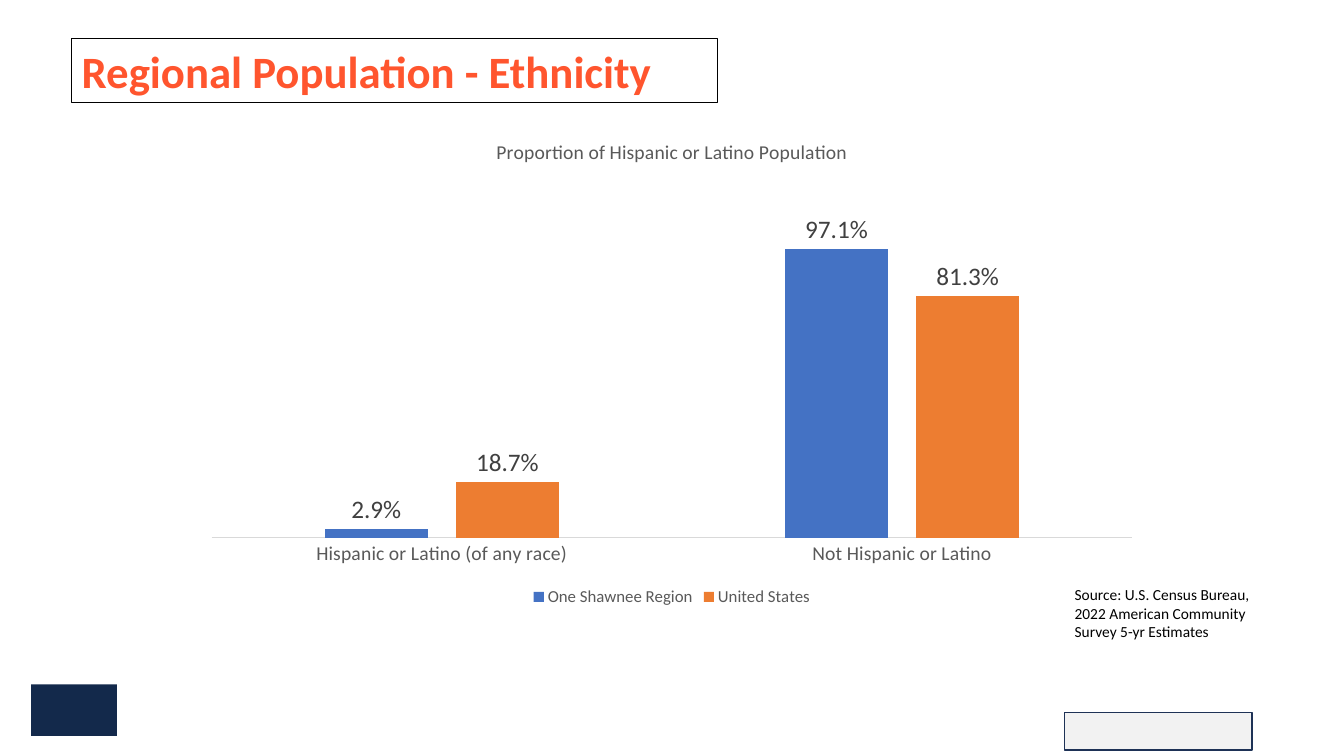
from pptx import Presentation
from pptx.chart.data import CategoryChartData
from pptx.dml.color import RGBColor
from pptx.enum.chart import XL_CHART_TYPE, XL_LABEL_POSITION, XL_LEGEND_POSITION, XL_TICK_MARK
from pptx.enum.shapes import MSO_SHAPE
from pptx.enum.text import MSO_ANCHOR, PP_ALIGN
from pptx.util import Inches, Pt


def color(value):
    return RGBColor.from_string(value)


class SlideBuilder:
    typeface = "Calibri"
    grey = "595959"
    percent = "0.0%"

    def __init__(self, slide):
        self.slide = slide

    def style(self, font, size, hue, bold=False):
        font.name = self.typeface
        font.size = Pt(size)
        font.bold = bold
        font.color.rgb = color(hue)

    def outline(self, line, hue, width):
        line.color.rgb = color(hue)
        line.width = Pt(width)

    def add_text(self, frame, text, size, hue, bold=False):
        frame.word_wrap = True
        paragraph = frame.paragraphs[0]
        paragraph.alignment = PP_ALIGN.LEFT
        run = paragraph.add_run()
        run.text = text
        self.style(run.font, size, hue, bold)

    def title(self, text, left, top, width, height):
        heading = self.slide.shapes.title
        heading.left, heading.top = Inches(left), Inches(top)
        heading.width, heading.height = Inches(width), Inches(height)
        self.outline(heading.line, "000000", 0.75)
        heading.text_frame.vertical_anchor = MSO_ANCHOR.MIDDLE
        self.add_text(heading.text_frame, text, 32, "FF552E", bold=True)

    def text(self, text, left, top, width, height, size):
        note = self.slide.shapes.add_textbox(
            Inches(left), Inches(top), Inches(width), Inches(height))
        self.add_text(note.text_frame, text, size, "000000")

    def block(self, left, top, width, height, fill, edge=None):
        panel = self.slide.shapes.add_shape(
            MSO_SHAPE.RECTANGLE, Inches(left), Inches(top), Inches(width), Inches(height))
        panel.shadow.inherit = False
        panel.fill.solid()
        panel.fill.fore_color.rgb = color(fill)
        if edge:
            self.outline(panel.line, edge, 1)
        else:
            panel.line.fill.background()

    def columns(self, heading, categories, series, left, top, width, height):
        data = CategoryChartData(number_format=self.percent)
        data.categories = categories
        for name, values, _ in series:
            data.add_series(name, values)
        chart = self.slide.shapes.add_chart(
            XL_CHART_TYPE.COLUMN_CLUSTERED, Inches(left), Inches(top),
            Inches(width), Inches(height), data).chart
        self.style(chart.font, 10, "000000")

        # Chart title and legend
        chart.has_title = True
        run = chart.chart_title.text_frame.paragraphs[0].add_run()
        run.text = heading
        self.style(run.font, 14, self.grey)
        chart.chart_title.include_in_layout = False
        chart.has_legend = True
        chart.legend.position = XL_LEGEND_POSITION.BOTTOM
        chart.legend.include_in_layout = False
        self.style(chart.legend.font, 12, self.grey)

        # Axes
        groups, shares = chart.category_axis, chart.value_axis
        groups.major_tick_mark = groups.minor_tick_mark = XL_TICK_MARK.NONE
        self.style(groups.tick_labels.font, 14, self.grey)
        self.outline(groups.format.line, "D9D9D9", 0.75)
        shares.minimum_scale, shares.maximum_scale = 0, 1.2
        shares.has_major_gridlines = False
        shares.tick_labels.number_format = self.percent
        shares.tick_labels.number_format_is_linked = False
        shares.visible = False

        # Columns with their values on top
        plot = chart.plots[0]
        plot.gap_width, plot.overlap = 219, -27
        plot.vary_by_categories = False
        for columns, (_, _, hue) in zip(plot.series, series):
            columns.format.fill.solid()
            columns.format.fill.fore_color.rgb = color(hue)
            labels = columns.data_labels
            labels.show_value = True
            labels.number_format = self.percent
            labels.number_format_is_linked = False
            labels.position = XL_LABEL_POSITION.OUTSIDE_END
            self.style(labels.font, 18, "404040")


def main():
    deck = Presentation()
    deck.slide_width, deck.slide_height = Inches(13.33), Inches(7.5)
    page = SlideBuilder(deck.slides.add_slide(deck.slide_layouts[5]))

    # Footer blocks
    page.block(0.31, 6.79, 0.85, 0.51, "13294B")
    page.block(10.56, 7.07, 1.86, 0.37, "F2F2F2", edge="1E3256")

    # Heading and source
    page.title("Regional Population - Ethnicity", 0.71, 0.38, 6.41, 0.64)
    page.text("Source: U.S. Census Bureau, 2022 American Community Survey 5-yr Estimates",
              10.56, 5.76, 2.19, 0.66, 11)

    # Ethnicity shares
    page.columns(
        "Proportion of Hispanic or Latino Population",
        ["Hispanic or Latino (of any race)", "Not Hispanic or Latino"],
        [("One Shawnee Region", (0.029, 0.971), "4472C4"),
         ("United States", (0.187, 0.813), "ED7D31")],
        1.91, 1.19, 9.51, 4.87)

    deck.save("out.pptx")


if __name__ == "__main__":
    main()
